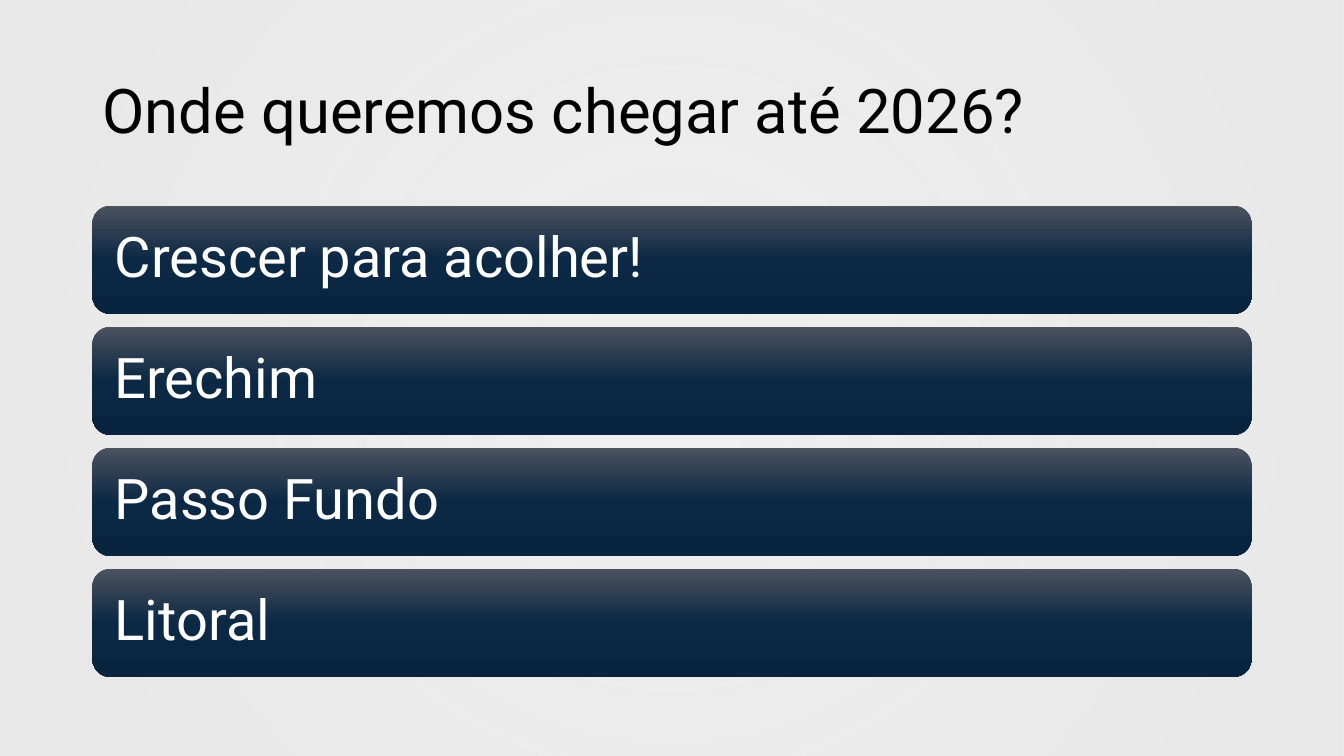
from lxml import etree
from pptx import Presentation
from pptx.dml.color import RGBColor
from pptx.enum.shapes import MSO_SHAPE
from pptx.enum.text import MSO_ANCHOR, PP_ALIGN
from pptx.oxml.ns import qn
from pptx.util import Cm, Pt

RECT, ROUNDED = MSO_SHAPE.RECTANGLE, MSO_SHAPE.ROUNDED_RECTANGLE
MIDDLE, LEFT = MSO_ANCHOR.MIDDLE, PP_ALIGN.LEFT

TITLE = "Onde queremos chegar até 2026?"
GOALS = ["Crescer para acolher!", "Erechim", "Passo Fundo", "Litoral"]

FONT = "Roboto"
COLORS = {"black": "000000", "white": "FFFFFF", "backdrop": "E8E8E8",
          "bar_top": "4C525F", "bar_middle": "0B2844", "bar_bottom": "08243E"}
# Gradient stops: position %, colour, opacity %
BACKDROP_STOPS = [(10, "backdrop", 68), (85, "backdrop", 97)]
BAR_STOPS = [(0, "bar_top", 100), (50, "bar_middle", 100), (100, "bar_bottom", 100)]

SLIDE_W, SLIDE_H = Cm(33.87), Cm(19.05)
MARGIN, CONTENT_W = Cm(2.33), Cm(29.21)
TITLE_TOP, TITLE_H = Cm(1.01), Cm(3.68)
BARS_TOP, BAR_H, BAR_PITCH = Cm(5.18), Cm(2.73), Cm(3.05)


def fill_gradient(sp, stops, radial=False):
    """Fill a shape from its centre outwards if radial, else from top to bottom."""
    sp.fill.background()
    no_fill = sp._element.spPr.find(qn("a:noFill"))
    grad = etree.Element(qn("a:gradFill"), rotWithShape="1")
    stop_list = etree.SubElement(grad, qn("a:gsLst"))
    for position, color, opacity in stops:
        stop = etree.SubElement(stop_list, qn("a:gs"), pos=str(position * 1000))
        rgb = etree.SubElement(stop, qn("a:srgbClr"), val=COLORS[color])
        if opacity < 100:
            etree.SubElement(rgb, qn("a:alpha"), val=str(opacity * 1000))
    if radial:
        path = etree.SubElement(grad, qn("a:path"), path="circle")
        etree.SubElement(path, qn("a:fillToRect"),
                         l="50000", t="50000", r="50000", b="50000")
    else:
        etree.SubElement(grad, qn("a:lin"), ang="5400000", scaled="0")
    no_fill.getparent().replace(no_fill, grad)


def add_gradient_shape(slide, kind, box, stops, radial=False):
    sp = slide.shapes.add_shape(kind, *box)
    sp.shadow.inherit = False
    sp.line.fill.background()
    fill_gradient(sp, stops, radial)
    return sp


def write_text(sp, text, size, color, inset):
    tf = sp.text_frame
    tf.word_wrap = True
    tf.vertical_anchor = MIDDLE
    tf.margin_left = tf.margin_right = tf.margin_top = tf.margin_bottom = inset
    p = tf.paragraphs[0]
    p.alignment = LEFT
    p.line_spacing = 0.9
    r = p.add_run()
    r.text = text
    r.font.name = FONT
    r.font.size = Pt(size)
    r.font.color.rgb = RGBColor.from_string(COLORS[color])


def main():
    prs = Presentation()
    prs.slide_width, prs.slide_height = SLIDE_W, SLIDE_H
    s = prs.slides.add_slide(prs.slide_layouts[6])

    add_gradient_shape(s, RECT, (0, 0, SLIDE_W, SLIDE_H), BACKDROP_STOPS, radial=True)
    title = s.shapes.add_textbox(MARGIN, TITLE_TOP, CONTENT_W, TITLE_H)
    write_text(title, TITLE, 44, "black", Cm(0.25))

    for i, goal in enumerate(GOALS):
        box = (MARGIN, BARS_TOP + i * BAR_PITCH, CONTENT_W, BAR_H)
        bar = add_gradient_shape(s, ROUNDED, box, BAR_STOPS)
        write_text(bar, goal, 40, "white", Cm(0.43))

    prs.save("out.pptx")


if __name__ == "__main__":
    main()
